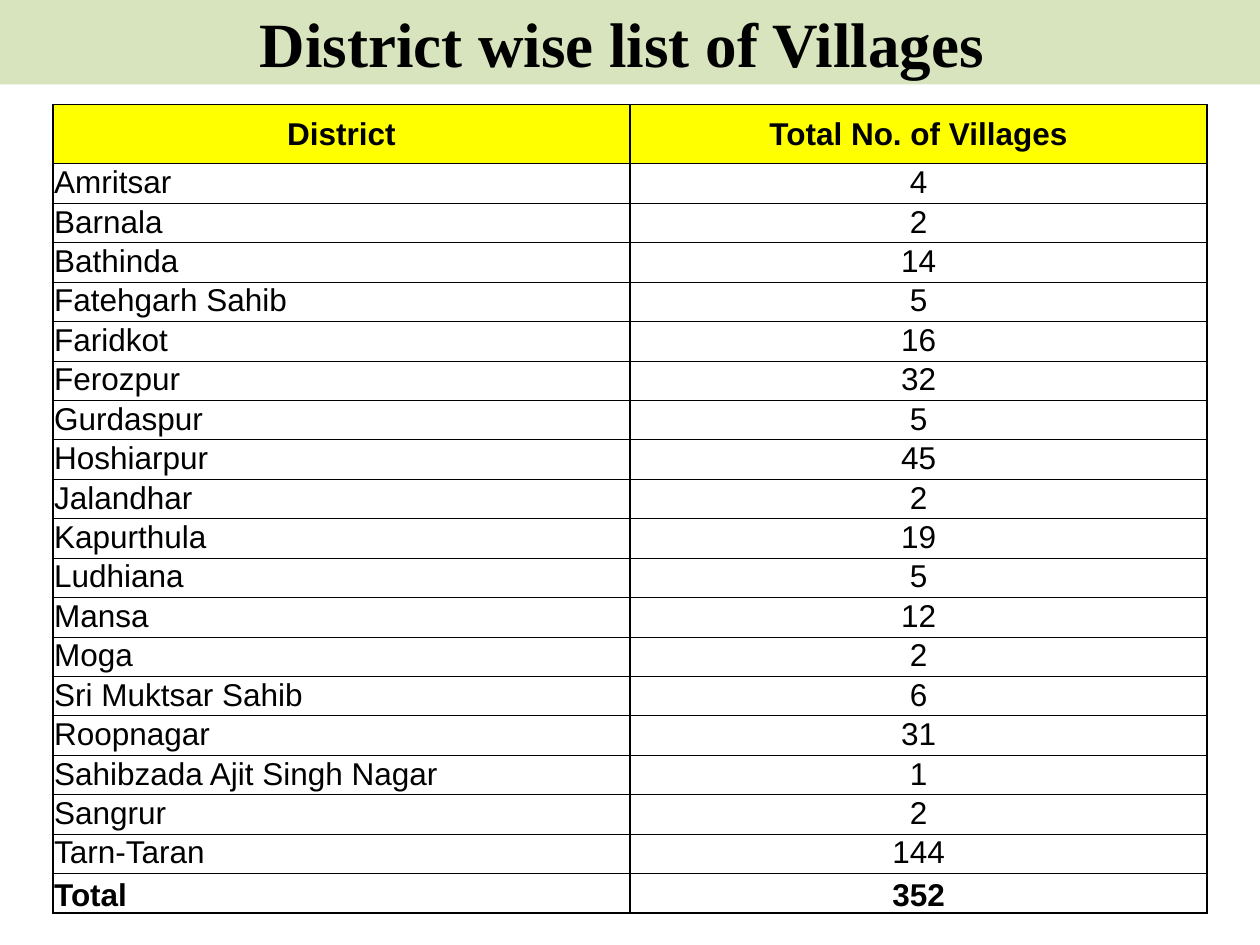
from lxml.etree import SubElement
from pptx import Presentation
from pptx.dml.color import RGBColor
from pptx.enum.shapes import MSO_SHAPE
from pptx.enum.text import MSO_ANCHOR, PP_ALIGN
from pptx.oxml.ns import qn
from pptx.util import Inches, Pt

TITLE = "District wise list of Villages "
HEADINGS = ("District", "Total No. of Villages")
VILLAGES = [
    ("Amritsar", 4), ("Barnala", 2), ("Bathinda", 14), ("Fatehgarh Sahib", 5),
    ("Faridkot", 16), ("Ferozpur", 32), ("Gurdaspur", 5), ("Hoshiarpur", 45),
    ("Jalandhar", 2), ("Kapurthula", 19), ("Ludhiana", 5), ("Mansa", 12),
    ("Moga", 2), ("Sri Muktsar Sahib", 6), ("Roopnagar", 31),
    ("Sahibzada Ajit Singh Nagar", 1), ("Sangrur", 2), ("Tarn-Taran", 144),
]
TOTAL = ("Total", 352)

BLACK = RGBColor(0, 0, 0)
WHITE = RGBColor(255, 255, 255)
YELLOW = RGBColor(255, 255, 0)
PALE_GREEN = RGBColor(0xD7, 0xE4, 0xBD)

SLIDE_W, SLIDE_H = Inches(10), Inches(7.5)
BANNER_H = Inches(0.67)
TABLE_TOP, TABLE_H = Inches(0.83), Inches(6.42)
MARGIN = Inches(0.42)
HEADER_H = Inches(0.47)
THICK, THIN = Pt(1), Pt(0.5)


def write(frame, text, align, **font_format):
    paragraph = frame.paragraphs[0]
    paragraph.alignment = align
    run = paragraph.add_run()
    run.text = text
    run.font.color.rgb = BLACK
    for attribute, value in font_format.items():
        setattr(run.font, attribute, value)


def draw_borders(cell, **widths):
    """Draw black cell borders; must run before the cell's fill is set."""
    properties = cell._tc.get_or_add_tcPr()
    for side, width in widths.items():
        line = SubElement(properties, qn(f"a:ln{side}"), w=str(width))
        fill = SubElement(line, qn("a:solidFill"))
        SubElement(fill, qn("a:srgbClr"), val=str(BLACK))


def add_banner(slide):
    banner = slide.shapes.add_shape(MSO_SHAPE.RECTANGLE, 0, 0, SLIDE_W, BANNER_H)
    banner.shadow.inherit = False
    banner.fill.solid()
    banner.fill.fore_color.rgb = PALE_GREEN
    banner.line.fill.background()
    banner.text_frame.vertical_anchor = MSO_ANCHOR.MIDDLE
    write(banner.text_frame, TITLE, PP_ALIGN.CENTER,
          name="Times New Roman", size=Pt(36), bold=True)


def add_village_table(slide):
    rows = [HEADINGS, *VILLAGES, TOTAL]
    last = len(rows) - 1
    width = SLIDE_W - 2 * MARGIN
    table = slide.shapes.add_table(
        len(rows), len(HEADINGS), MARGIN, TABLE_TOP, width, TABLE_H).table
    table.horz_banding = False
    for column in table.columns:
        column.width = width // len(HEADINGS)

    # Thick rules frame the heading row and the total row.
    rules = [THICK if r in (0, 1, last, last + 1) else THIN
             for r in range(last + 2)]
    anchors = {0: MSO_ANCHOR.MIDDLE, last: MSO_ANCHOR.BOTTOM}
    for r, values in enumerate(rows):
        table.rows[r].height = HEADER_H if r == 0 else (TABLE_H - HEADER_H) // last
        for c, value in enumerate(values):
            cell = table.cell(r, c)
            cell_format = {
                "margin_left": Inches(0.01), "margin_right": Inches(0.01),
                "margin_top": Inches(0.01), "margin_bottom": 0,
                "vertical_anchor": anchors.get(r, MSO_ANCHOR.TOP),
            }
            for attribute, setting in cell_format.items():
                setattr(cell, attribute, setting)
            draw_borders(cell, L=THICK, R=THICK, T=rules[r], B=rules[r + 1])
            cell.fill.solid()
            cell.fill.fore_color.rgb = YELLOW if r == 0 else WHITE
            align = PP_ALIGN.LEFT if r and c == 0 else PP_ALIGN.CENTER
            write(cell.text_frame, str(value), align,
                  name="Arial", size=Pt(18), bold=r in (0, last))


def main():
    presentation = Presentation()
    presentation.slide_width, presentation.slide_height = SLIDE_W, SLIDE_H
    slide = presentation.slides.add_slide(presentation.slide_layouts[6])
    add_banner(slide)
    add_village_table(slide)
    presentation.save("out.pptx")


if __name__ == "__main__":
    main()
